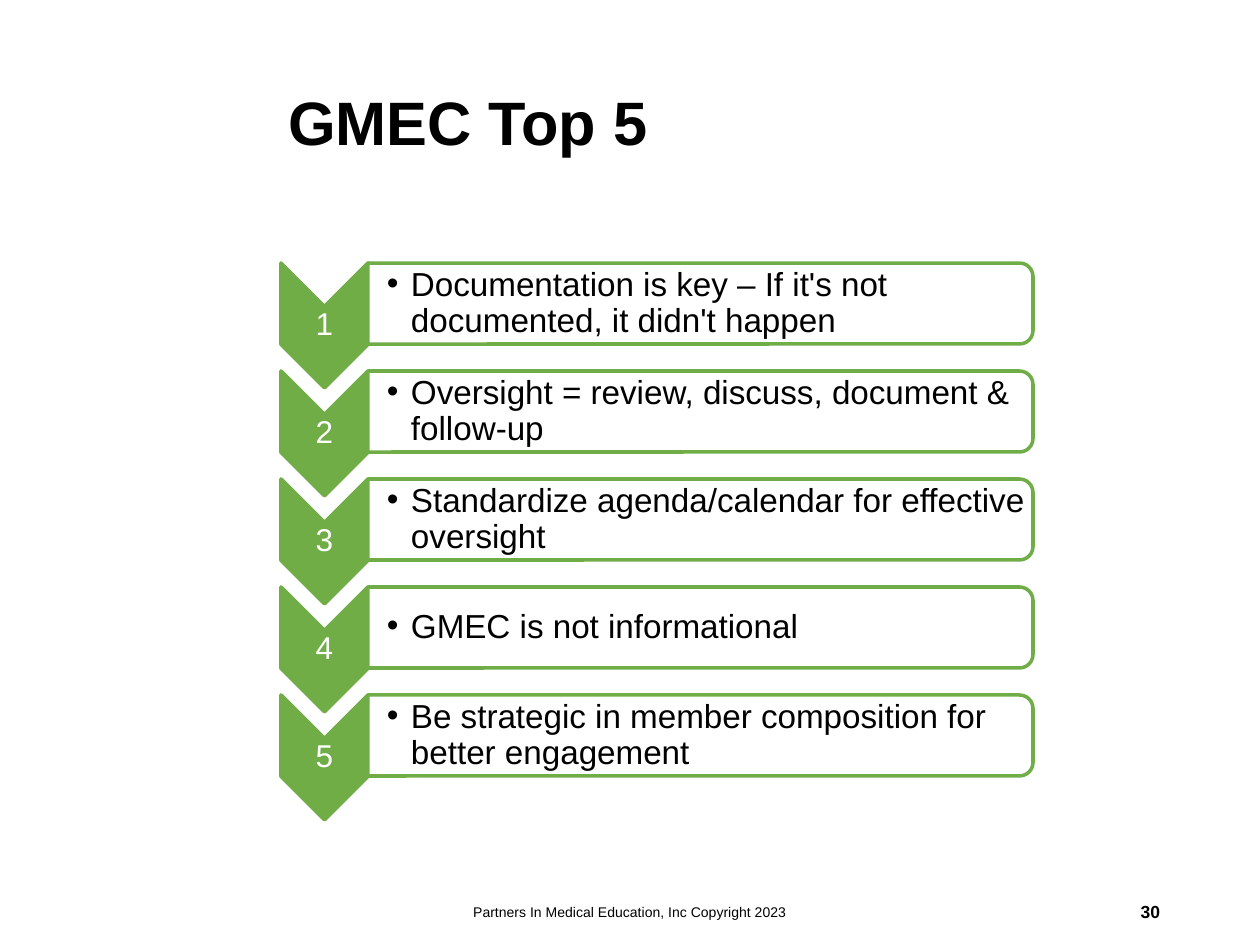
import dataclasses
import pptx
import pptx.util
import pptx.dml.color
import pptx.enum.shapes
import pptx.enum.text
import pptx.oxml
import pptx.oxml.ns

SHAPE = pptx.enum.shapes.MSO_SHAPE
ALIGN = pptx.enum.text.PP_ALIGN
ANCHOR = pptx.enum.text.MSO_ANCHOR
FIT = pptx.enum.text.MSO_AUTO_SIZE


@dataclasses.dataclass(frozen=True)
class Theme:
    font: str = "Arial"
    ink: str = "000000"
    paper: str = "FFFFFF"
    green: str = "70AD47"
    title: int = 35
    item: int = 19
    digit: int = 18
    page: int = 10
    foot: int = 8
    edge: int = 2


THEME = Theme()
ITEMS = [
    "Documentation is key – If it's not documented, it didn't happen",
    "Oversight = review, discuss, document & follow-up",
    "Standardize agenda/calendar for effective oversight",
    "GMEC is not informational",
    "Be strategic in member composition for better engagement",
]


def px(count):
    return pptx.util.Emu(round(count * 914400 / 126))


def tint(code):
    return pptx.dml.color.RGBColor.from_string(code)


def write(shape, text, size, color=THEME.ink, bold=False, align=ALIGN.LEFT,
          pads=(13, 6, 13, 6), lead=None):
    """Put one formatted run in the shape; pads are left, top, right, bottom."""
    frame = shape.text_frame
    frame.word_wrap = True
    frame.auto_size = FIT.NONE
    frame.vertical_anchor = ANCHOR.MIDDLE
    (frame.margin_left, frame.margin_top,
     frame.margin_right, frame.margin_bottom) = map(px, pads)
    para = frame.paragraphs[0]
    para.alignment = align
    if lead:
        para.line_spacing = lead
    run = para.add_run()
    run.text = text
    run.font.name = THEME.font
    run.font.size = pptx.util.Pt(size)
    run.font.bold = bold
    run.font.color.rgb = tint(color)
    return para


def label(slide, box, text, size, **style):
    return write(slide.shapes.add_textbox(*map(px, box)), text, size, **style)


def bullet(para, indent):
    props = para._p.get_or_add_pPr()
    props.set("marL", str(px(indent)))
    props.set("indent", str(-px(indent)))
    space = pptx.oxml.ns.nsdecls("a")
    for tag in (f'<a:buClr {space}><a:srgbClr val="{THEME.ink}"/></a:buClr>',
                f'<a:buFont {space} typeface="{THEME.font}"/>',
                f'<a:buChar {space} char="•"/>'):
        props.append(pptx.oxml.parse_xml(tag))


def turned(slide, kind, box, fill):
    """Add a shape turned by 90 degrees that covers the box as seen."""
    left, top, width, height = box
    shift = (width - height) / 2
    shape = slide.shapes.add_shape(
        kind, px(left + shift), px(top - shift), px(height), px(width))
    shape.rotation = 90
    shape.shadow.inherit = False
    shape.fill.solid()
    shape.fill.fore_color.rgb = tint(fill)
    shape.line.color.rgb = tint(THEME.green)
    shape.line.width = pptx.util.Pt(THEME.edge)
    return shape


def step(slide, box, digit, text):
    """Draw a numbered chevron with its panel; the box height is the chevron's."""
    left, top, width, height = box
    wide, tall = 87, 81
    notch = wide // 2
    turned(slide, SHAPE.CHEVRON, (left, top, wide, height), THEME.green)
    label(slide, (left, top + notch, wide, height - 2 * notch), digit,
          THEME.digit, color=THEME.paper, align=ALIGN.CENTER,
          pads=(1, 1, 1, 1), lead=0.9)
    panel = (left + wide, top, width - wide, tall)
    turned(slide, SHAPE.ROUND_2_SAME_RECTANGLE, panel, THEME.paper)
    inner = (left + wide, top + 4, width - wide - 4, tall - 8)
    para = label(slide, inner, text, THEME.item, pads=(19, 1, 1, 1), lead=0.9)
    bullet(para, 24)


def steps(slide, box):
    left, top, width, height = box
    tall = 125
    pitch = (height - tall) / (len(ITEMS) - 1)
    for row, text in enumerate(ITEMS):
        step(slide, (left, top + row * pitch, width, tall), str(row + 1), text)


def head(slide, box):
    title = slide.shapes.title
    title.left, title.top, title.width, title.height = map(px, box)
    write(title, "GMEC Top 5", THEME.title, bold=True, lead=0.9)


def foot(slide, box):
    left, top, width, height = box
    label(slide, (left + width - 284, top, 284, height), "30", THEME.page,
          bold=True, align=ALIGN.RIGHT)
    label(slide, (left, top, 426, height),
          "Partners In Medical Education, Inc Copyright 2023", THEME.foot,
          align=ALIGN.CENTER)


def main():
    deck = pptx.Presentation()
    deck.slide_width, deck.slide_height = px(1260), px(945)
    slide = deck.slides.add_slide(deck.slide_layouts.get_by_name("Title Only"))
    head(slide, (275, 34, 900, 183))
    steps(slide, (281, 263, 752, 557))
    foot(slide, (417, 887, 756, 50))
    deck.save("out.pptx")


if __name__ == "__main__":
    main()
